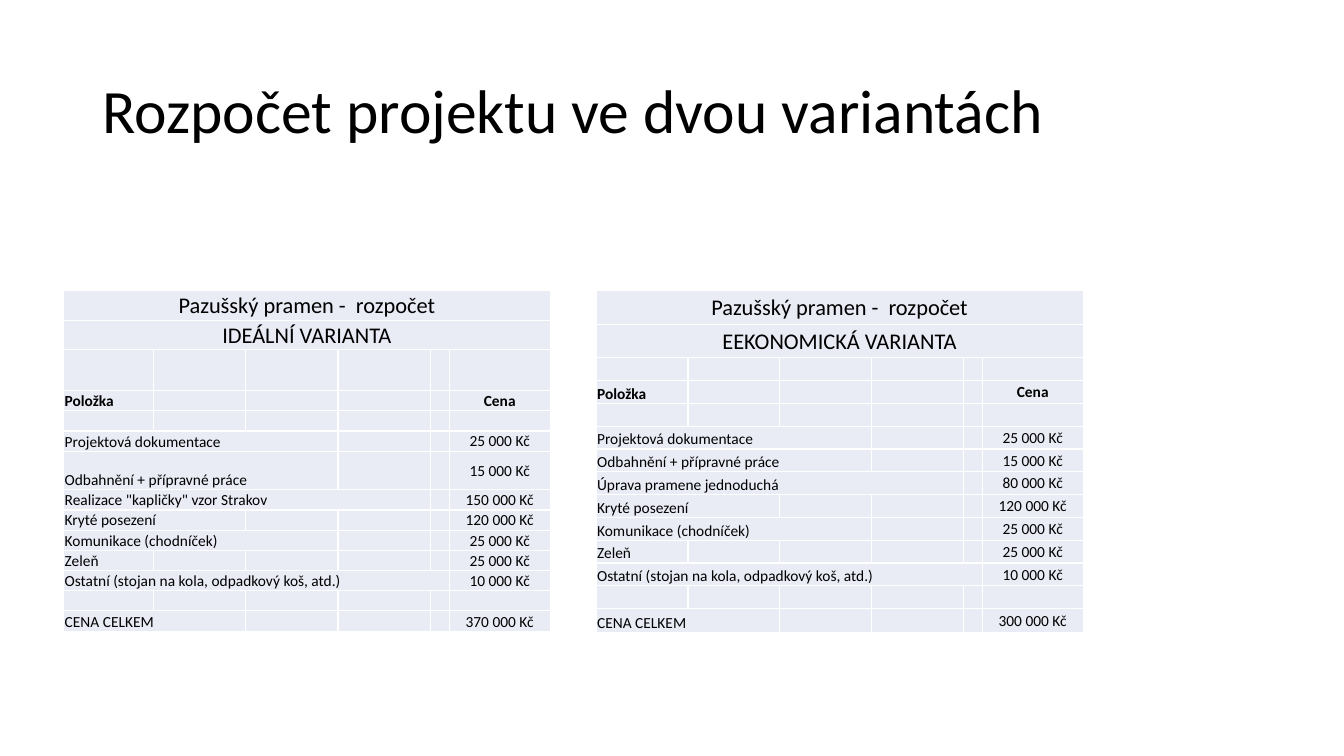
from lxml.etree import SubElement
from pptx import Presentation
from pptx.dml.color import RGBColor
from pptx.enum.text import MSO_ANCHOR as Anchor, MSO_AUTO_SIZE as AutoSize, PP_ALIGN as Align
from pptx.oxml.ns import qn
from pptx.util import Pt


def color(value):
    return RGBColor.from_string(value)


def write(tf, text, size, bold=False, align=Align.LEFT, font="Calibri", fg="000000"):
    p = tf.paragraphs[0]
    p.alignment = align
    if not text:
        SubElement(p._p, qn("a:endParaRPr"), sz=str(size * 100))
        return
    r = p.add_run()
    r.text = text
    r.font.size, r.font.bold, r.font.name = Pt(size), bold, font
    r.font.color.rgb = color(fg)


class BudgetSlide:
    FILL, BORDER = "E9EBF5", "FFFFFF"

    def __init__(self, prs):
        self.s = prs.slides.add_slide(prs.slide_layouts[5])

    def title(self, text, left, top, width, height):
        sp = self.s.shapes.title
        sp.left, sp.top, sp.width, sp.height = Pt(left), Pt(top), Pt(width), Pt(height)
        tf = sp.text_frame
        tf.word_wrap, tf.auto_size = True, AutoSize.NONE
        tf.vertical_anchor = Anchor.MIDDLE
        write(tf, text, 44)
        tf.paragraphs[0].line_spacing = 0.9

    def cell(self, cell):
        """Give a cell its margins, white borders and fill."""
        cell.margin_left = cell.margin_right = cell.margin_top = Pt(0.72)
        cell.margin_bottom = 0
        tcPr = cell._tc.get_or_add_tcPr()
        for side in ("lnL", "lnR", "lnT", "lnB"):
            ln = SubElement(tcPr, qn(f"a:{side}"), w=str(Pt(1)))
            fill = SubElement(ln, qn("a:solidFill"))
            SubElement(fill, qn("a:srgbClr"), val=self.BORDER)
        cell.fill.solid()
        cell.fill.fore_color.rgb = color(self.FILL)

    def budget(self, left, top, widths, heights, headings, items):
        """Draw a budget table; items are (label, columns spanned, price)."""
        rows = [(h, len(widths), "") for h in headings] + items
        table = self.s.shapes.add_table(len(rows), len(widths), Pt(left), Pt(top),
                                        Pt(sum(widths)), Pt(sum(heights))).table
        table.first_row = table.horz_banding = False
        for col, width in zip(table.columns, widths):
            col.width = Pt(width)
        last = len(widths) - 1
        for i, (label, span, price) in enumerate(rows):
            table.rows[i].height = Pt(heights[i])
            heading = i < len(headings)
            for j in range(len(widths)):
                cell = table.cell(i, j)
                self.cell(cell)
                text = {0: label, last: price}.get(j, "")
                centred = heading or j == last
                cell.vertical_anchor = Anchor.MIDDLE if centred else Anchor.BOTTOM
                write(cell.text_frame, text, 16 if heading and j == 0 else 11,
                      bold=text in ("Položka", "Cena"),
                      align=Align.CENTER if centred else Align.LEFT)
            if span > 1:
                table.cell(i, 0).merge(table.cell(i, span - 1))


def budget_items(spring_work, spring_price, total):
    """List the rows that both variants share around the work on the spring."""
    blank = ("", 1, "")
    return [
        blank,
        ("Položka", 1, "Cena"),
        blank,
        ("Projektová dokumentace", 3, "25 000 Kč"),
        ("Odbahnění + přípravné práce", 3, "15 000 Kč"),
        (spring_work, 4, spring_price),
        ("Kryté posezení", 2, "120 000 Kč"),
        ("Komunikace (chodníček)", 3, "25 000 Kč"),
        ("Zeleň", 1, "25 000 Kč"),
        ("Ostatní (stojan na kola, odpadkový koš, atd.)", 5, "10 000 Kč"),
        blank,
        ("CENA CELKEM", 2, total),
    ]


def main():
    prs = Presentation()
    prs.slide_width, prs.slide_height = Pt(960), Pt(540)
    slide = BudgetSlide(prs)
    slide.title("Rozpočet projektu ve dvou variantách", 66, 28.75, 828, 104.4)

    name = "Pazušský pramen -  rozpočet"
    top = 207.2
    slide.budget(45.5, top, [64] + [66] * 3 + [13.5, 72],
                 [21.6, 20.9, 29.4] + [14.4] * 3 + [27.6] + [14.4] * 6 + [15],
                 [name, "IDEÁLNÍ VARIANTA"],
                 budget_items('Realizace "kapličky" vzor Strakov', "150 000 Kč", "370 000 Kč"))
    slide.budget(425.8, top, [65.6] * 4 + [13.5, 72],
                 [24.4, 23.9] + [16.3] * 11 + [17],
                 [name, "EEKONOMICKÁ VARIANTA"],
                 budget_items("Úprava pramene jednoduchá", "80 000 Kč", "300 000 Kč"))
    prs.save("out.pptx")


if __name__ == "__main__":
    main()
